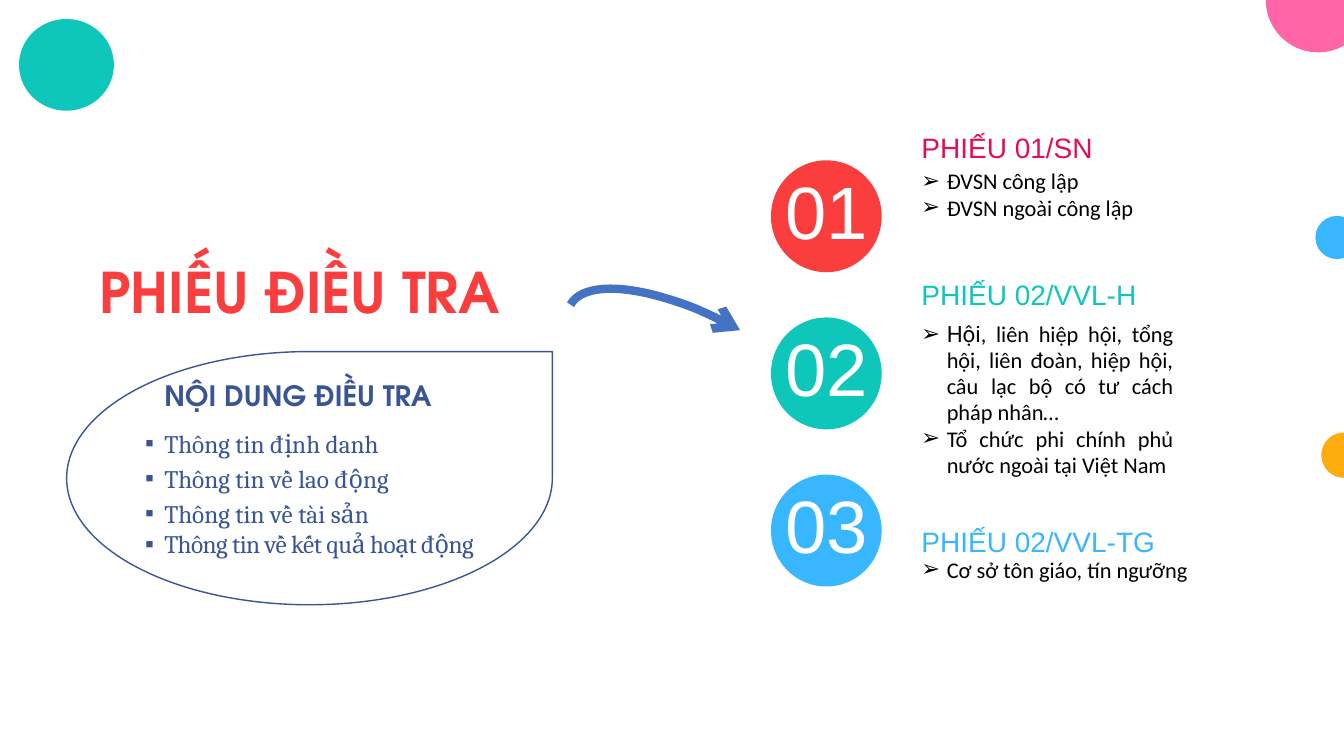
"""Builds the survey forms slide."""
import math

from lxml import etree
from pptx import Presentation, util as u
from pptx.dml.color import RGBColor
from pptx.enum import shapes, text
from pptx.oxml.ns import qn

RED = RGBColor(0xFA, 0x3E, 0x3E)
TEAL = RGBColor(0x0F, 0xC6, 0xBB)
SKY = RGBColor(0x38, 0xB6, 0xFF)
PINK = RGBColor(0xFF, 0x65, 0xA7)
AMBER = RGBColor(0xFF, 0xAD, 0x0E)
CRIMSON = RGBColor(0xE4, 0x0E, 0x55)
NAVY = RGBColor(0x39, 0x55, 0x94)
BLUE = RGBColor(0x44, 0x72, 0xC4)
BLACK = RGBColor(0, 0, 0)
WHITE = RGBColor(0xFF, 0xFF, 0xFF)
WIDTH, HEIGHT = 33.87, 19.05
LEFT, CENTER, JUSTIFY = (text.PP_ALIGN.LEFT, text.PP_ALIGN.CENTER,
                         text.PP_ALIGN.JUSTIFY)


class SurveySlide:
    """Holds the style and the current slide."""

    display, number, body, serif = "TeX Gyre Adventor", "Arial", "Calibri", "Cambria"

    def __init__(self, deck):
        self.slide = deck.slides.add_slide(deck.slide_layouts[1])
        self.shapes = self.slide.shapes

    def frame(self, holder, box):
        holder.left, holder.top, holder.width, holder.height = map(u.Cm, box)
        frame = holder.text_frame
        frame.margin_left = frame.margin_right = 0
        frame.margin_top = frame.margin_bottom = 0
        frame.word_wrap = True
        frame.vertical_anchor = text.MSO_ANCHOR.TOP
        frame.auto_size = text.MSO_AUTO_SIZE.SHAPE_TO_FIT_TEXT
        return frame

    def textbox(self, *box):
        return self.frame(self.shapes.add_textbox(0, 0, 0, 0), box)

    def line(self, frame, words, font, size, color, spacing, align=LEFT,
             bold=False, bullet=None, margin=0, hanging=0, after=0):
        first = frame.paragraphs[0]
        paragraph = frame.add_paragraph() if first.runs else first
        properties = paragraph._p.get_or_add_pPr()
        properties.set("marL", str(u.Cm(margin)))
        properties.set("indent", str(-u.Cm(hanging)))
        if bullet:
            etree.SubElement(properties, qn("a:buFont"), typeface="Arial")
            etree.SubElement(properties, qn("a:buChar"), char=bullet)
        else:
            etree.SubElement(properties, qn("a:buNone"))
        paragraph.add_run().text = words
        paragraph.alignment = align
        paragraph.line_spacing = spacing
        paragraph.space_before, paragraph.space_after = u.Pt(0), u.Pt(after)
        style = paragraph.font
        style.name, style.size, style.bold = font, u.Pt(size), bold
        style.color.rgb = color
        return paragraph

    def circle(self, left, top, width, height, color):
        disc = self.shapes.add_shape(shapes.MSO_SHAPE.OVAL,
                                     *map(u.Cm, (left, top, width, height)))
        self.paint(disc, color)

    def paint(self, figure, color):
        figure.shadow.inherit = False
        figure.fill.solid()
        figure.fill.fore_color.rgb = color
        figure.line.fill.background()

    def corner(self, center, radius, color):
        """Draws the part of a disc that shows below the top right corner."""
        end = math.degrees(math.acos((WIDTH - center) / radius))
        angles = [math.radians(180 + (end - 180) * step / 40) for step in range(41)]
        rim = [(u.Cm(center + radius * math.cos(a)), u.Cm(radius * math.sin(a)))
               for a in angles]
        builder = self.shapes.build_freeform(*rim[0])
        builder.add_line_segments(rim[1:] + [(u.Cm(WIDTH), 0)])
        self.paint(builder.convert_to_shape(), color)

    def outline(self, kind, box, color, weight):
        figure = self.shapes.add_shape(kind, *map(u.Cm, box))
        figure.shadow.inherit = False
        figure.fill.background()
        figure.line.color.rgb = color
        figure.line.width = u.Pt(weight)
        return figure

    def arrow(self, box, rotation):
        sweep = self.outline(shapes.MSO_SHAPE.ARC, box, BLUE, 6)
        sweep.rotation = rotation
        etree.SubElement(sweep.line._get_or_add_ln(), qn("a:tailEnd"), type="arrow")

    def title(self, words, *box):
        frame = self.frame(self.shapes.title, box)
        self.line(frame, words, self.display, 40, RED, u.Pt(48.5), CENTER, True)

    def contents(self, heading, topics, *box):
        frame = self.frame(self.slide.placeholders[1], box)
        self.line(frame, heading, self.display, 20, NAVY, u.Pt(25), bold=True,
                  margin=0.96, after=8)
        for topic in topics:
            last = topic == topics[-1]
            entry = self.line(frame, topic, self.serif, 18, NAVY,
                              1.0 if last else u.Pt(25),
                              bullet="▪", margin=0.96, hanging=0.48)
        entry.runs[0].font._element.set("spc", "-40")

    def badge(self, index, color):
        top = 4.04 + 3.96 * index
        self.circle(19.43, top, 2.79, 2.82, color)
        self.line(self.textbox(19.69, top + 0.66, 2.29, 1.75), f"{index + 1:02}",
                  self.number, 53, WHITE, u.Pt(48.5), CENTER)

    def form(self, name, color, top, units, units_top, width, height):
        self.line(self.textbox(23.22, top, 6.76, 0.71), name, self.number, 20,
                  color, u.Pt(20))
        frame = self.textbox(23.22, units_top, width, height)
        return [self.line(frame, unit, self.body, 16, BLACK, u.Pt(18.7), JUSTIFY,
                          bullet="➢", margin=0.64, hanging=0.64)
                for unit in units]


def main():
    deck = Presentation()
    deck.slide_width, deck.slide_height = u.Cm(WIDTH), u.Cm(HEIGHT)
    survey = SurveySlide(deck)
    survey.corner(33.22, 1.32, PINK)
    for index, color in enumerate((RED, TEAL, SKY)):
        survey.badge(index, color)
    survey.title("PHIẾU ĐIỀU TRA", 0.71, 6.48, 13.67, 1.73)

    survey.form("PHIẾU 01/SN", CRIMSON, 3.43,
                ["ĐVSN công lập", "ĐVSN ngoài công lập"], 4.24, 6.35, 1.35)
    associations, _ = survey.form(
        "PHIẾU 02/VVL-H", TEAL, 7.14,
        ["Hội", "Tổ chức phi chính phủ nước ngoài tại Việt Nam"], 8.08, 6.35, 4.06)
    associations.runs[0].font.name = "Roboto"
    associations.add_run().text = (", liên hiệp hội, tổng hội, liên đoàn, hiệp hội, "
                                   "câu lạc bộ có tư cách pháp nhân…")
    survey.form("PHIẾU 02/VVL-TG", SKY, 13.36,
                ["Cơ sở tôn giáo, tín ngưỡng"], 14.02, 8.76, 0.69)

    survey.circle(33.3, 10.9, 1.14, 1.14, AMBER)
    survey.circle(33.15, 5.44, 1.09, 1.09, SKY)
    survey.circle(0.48, 0.48, 2.39, 2.31, TEAL)
    survey.arrow((16.41, 5.59, 3.02, 8.1), 299)
    survey.contents("NỘI DUNG ĐIỀU TRA",
                    ["Thông tin định danh", "Thông tin về lao động",
                     "Thông tin về tài sản", "Thông tin về kết quả hoạt động"],
                    3.18, 9.5, 11, 4.67)
    survey.outline(shapes.MSO_SHAPE.TEAR, (1.68, 8.86, 12.24, 6.38), NAVY, 1)
    deck.save("out.pptx")


if __name__ == "__main__":
    main()
